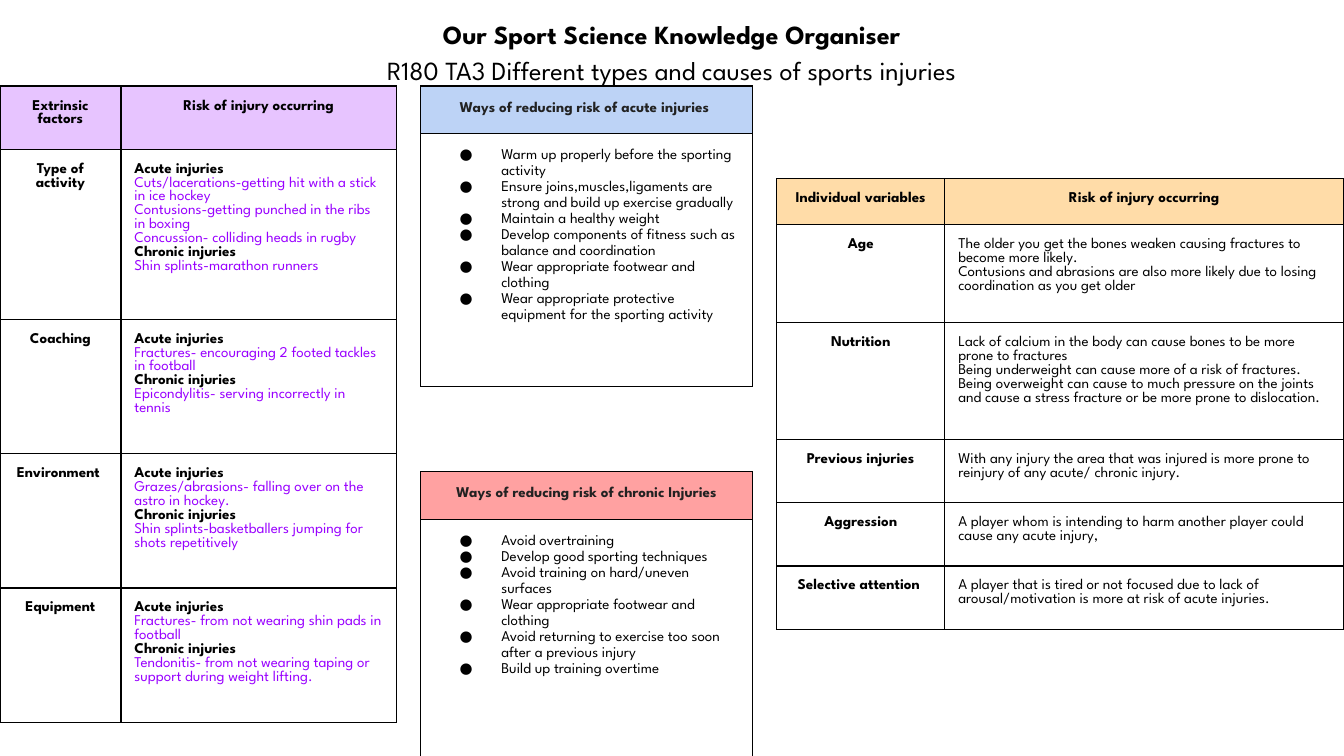
from dataclasses import dataclass
from typing import Any

import pptx
import pptx.dml.color
import pptx.enum.text
import pptx.oxml
import pptx.oxml.ns
import pptx.util

Inches = pptx.util.Inches
Align = pptx.enum.text.PP_ALIGN
NS = pptx.oxml.ns.nsdecls("a")


@dataclass(frozen=True)
class Theme:
    face: str = "League Spartan"
    black: str = "000000"
    dark: str = "222222"
    purple: str = "9900FF"
    blue: str = "4A86E8"
    red: str = "FF0000"
    orange: str = "FF9900"
    title: int = 14
    body: int = 8
    rule: float = 0.75
    loose: float = 1.15
    pad: float = 0.1


THEME = Theme()


@dataclass(frozen=True)
class Grid:
    left: float
    top: float
    cols: list[float]
    rows: list[float]
    cells: list[list[str]]
    tint: str
    alpha: int
    head: str = THEME.black
    ink: str = THEME.black
    listed: bool = False


def apply(item: Any, values: dict[str, Any]) -> None:
    for name, value in values.items():
        setattr(item, name, value)


def margins() -> dict[str, Any]:
    return {f"margin_{side}": Inches(THEME.pad) for side in ("left", "right", "top", "bottom")}


def write(para: Any, text: str, size: int, ink: str, bold: bool) -> None:
    run = para.add_run()
    run.text = text
    apply(run.font, {"name": THEME.face, "size": pptx.util.Pt(size), "bold": bold})
    run.font.color.rgb = pptx.dml.color.RGBColor.from_string(ink)


def bullet(para: Any) -> None:
    props = para._p.get_or_add_pPr()
    props.set("marL", str(Inches(0.5)))
    props.set("indent", str(Inches(-0.31)))
    for part in (f'<a:buClr {NS}><a:srgbClr val="{THEME.black}"/></a:buClr>',
                 f'<a:buSzPts {NS} val="{THEME.body * 100}"/>',
                 f'<a:buFont {NS} typeface="{THEME.face}"/>',
                 f'<a:buChar {NS} char="●"/>'):
        props.append(pptx.oxml.parse_xml(part))


def border(cell: Any) -> None:
    props = cell._tc.get_or_add_tcPr()
    width = pptx.util.Pt(THEME.rule)
    for side in "LRTB":
        props.append(pptx.oxml.parse_xml(
            f'<a:ln{side} {NS} w="{width}"><a:solidFill><a:srgbClr val="{THEME.black}"/>'
            f'</a:solidFill><a:prstDash val="solid"/></a:ln{side}>'))


def tint(cell: Any, color: str, alpha: int) -> None:
    cell.fill.solid()
    cell.fill.fore_color.rgb = pptx.dml.color.RGBColor.from_string(color)
    shade = cell._tc.tcPr.find(pptx.oxml.ns.qn("a:solidFill"))
    shade[0].append(pptx.oxml.parse_xml(f'<a:alpha {NS} val="{alpha * 1000}"/>'))


def draw_cell(cell: Any, grid: Grid, row: int, col: int) -> None:
    apply(cell, margins())
    border(cell)
    if row == 0:
        tint(cell, grid.tint, grid.alpha)
    else:
        cell.fill.background()
    label = row == 0 or (col == 0 and not grid.listed)
    frame = cell.text_frame
    for num, line in enumerate(grid.cells[row][col].split("\n")):
        para = frame.add_paragraph() if num else frame.paragraphs[0]
        bold = label or line in ("Acute injuries", "Chronic injuries")
        ink = grid.head if row == 0 else THEME.black if bold else grid.ink
        apply(para, {"alignment": Align.CENTER if label else Align.LEFT,
                     "line_spacing": THEME.loose if grid.listed else 1.0})
        if grid.listed and row:
            bullet(para)
        write(para, line, THEME.body, ink, bold)


def draw_grid(slide: Any, grid: Grid) -> None:
    table = slide.shapes.add_table(
        len(grid.rows), len(grid.cols), Inches(grid.left), Inches(grid.top),
        Inches(sum(grid.cols)), Inches(sum(grid.rows))).table
    apply(table, {"first_row": False, "horz_banding": False})
    for col, width in zip(table.columns, grid.cols):
        col.width = Inches(width)
    for row, height in zip(table.rows, grid.rows):
        row.height = Inches(height)
    for row in range(len(grid.rows)):
        for col in range(len(grid.cols)):
            draw_cell(table.cell(row, col), grid, row, col)


def draw_title(slide: Any, lines: list[str]) -> None:
    box = slide.shapes.add_textbox(Inches(1.56), Inches(0), Inches(6.88), Inches(0.71))
    frame = box.text_frame
    apply(frame, margins() | {"word_wrap": True,
                              "auto_size": pptx.enum.text.MSO_AUTO_SIZE.SHAPE_TO_FIT_TEXT})
    for num, line in enumerate(lines):
        para = frame.add_paragraph() if num else frame.paragraphs[0]
        apply(para, {"alignment": Align.CENTER, "line_spacing": THEME.loose})
        write(para, line, THEME.title, THEME.black, num == 0)


# Ways of reducing risk
ACUTE = Grid(3.13, 0.64, [2.47], [0.35, 1.87], [
    ["Ways of reducing risk of acute injuries "],
    ["Warm up properly before the sporting activity\n"
     "Ensure joins,muscles,ligaments are strong and build up exercise gradually\n"
     "Maintain a healthy weight\n"
     "Develop components of fitness such as balance and coordination\n"
     "Wear appropriate footwear and clothing\n"
     "Wear appropriate protective equipment for the sporting activity"],
], THEME.blue, 36, head=THEME.dark, listed=True)

CHRONIC = Grid(3.13, 3.51, [2.47], [0.35, 1.79], [
    ["Ways of reducing risk of chronic Injuries"],
    ["Avoid overtraining\nDevelop good sporting techniques\n"
     "Avoid training on hard/uneven surfaces\nWear appropriate footwear and clothing\n"
     "Avoid returning to exercise too soon after a previous injury\n"
     "Build up training overtime"],
], THEME.red, 37, head=THEME.dark, listed=True)

# Extrinsic factors
FACTORS = Grid(0, 0.64, [0.9, 2.05], [0.47, 1.26, 1, 1, 1], [
    ["Extrinsic factors", "Risk of injury occurring"],
    ["Type of activity",
     "Acute injuries\nCuts/lacerations-getting hit with a stick in ice hockey\n"
     "Contusions-getting punched in the ribs in boxing\n"
     "Concussion- colliding heads in rugby\n"
     "Chronic injuries\nShin splints-marathon runners"],
    ["Coaching",
     "Acute injuries\nFractures- encouraging 2 footed tackles in football\n"
     "Chronic injuries\nEpicondylitis- serving incorrectly in tennis"],
    ["Environment ",
     "Acute injuries\nGrazes/abrasions- falling over on the astro in hockey.\n"
     "Chronic injuries\nShin splints-basketballers jumping for shots repetitively"],
    ["Equipment",
     "Acute injuries\nFractures- from not wearing shin pads in football\n"
     "Chronic injuries\nTendonitis- from not wearing taping or support during weight lifting."],
], THEME.purple, 23, ink=THEME.purple)

# Individual variables
PERSON = Grid(5.78, 1.33, [1.25, 2.97], [0.34, 0.73, 0.87, 0.47, 0.47, 0.47], [
    ["Individual variables", "Risk of injury occurring"],
    ["Age", "The older you get the bones weaken causing fractures to become more likely.\n"
     "Contusions and abrasions are also more likely due to losing coordination as you get older"],
    ["Nutrition", "Lack of calcium in the body can cause bones to be more prone to fractures\n"
     "Being underweight can cause more of a risk of fractures.\n"
     "Being overweight can cause to much pressure on the joints and cause a stress fracture "
     "or be more prone to dislocation."],
    ["Previous injuries", "With any injury the area that was injured is more prone to "
     "reinjury of any acute/ chronic injury."],
    ["Aggression", "A player whom is intending to harm another player could cause any acute injury,"],
    ["Selective attention ", "A player that is tired or not focused due to lack of "
     "arousal/motivation is more at risk of acute injuries."],
], THEME.orange, 34)


def main() -> None:
    deck = pptx.Presentation()
    wide = Inches(10)
    apply(deck, {"slide_width": wide, "slide_height": wide * 9 // 16})
    slide = deck.slides.add_slide(deck.slide_layouts[6])
    draw_title(slide, ["Our Sport Science Knowledge Organiser",
                       "R180 TA3 Different types and causes of sports injuries"])
    for grid in (ACUTE, CHRONIC, FACTORS, PERSON):
        draw_grid(slide, grid)
    deck.save("out.pptx")


if __name__ == "__main__":
    main()
